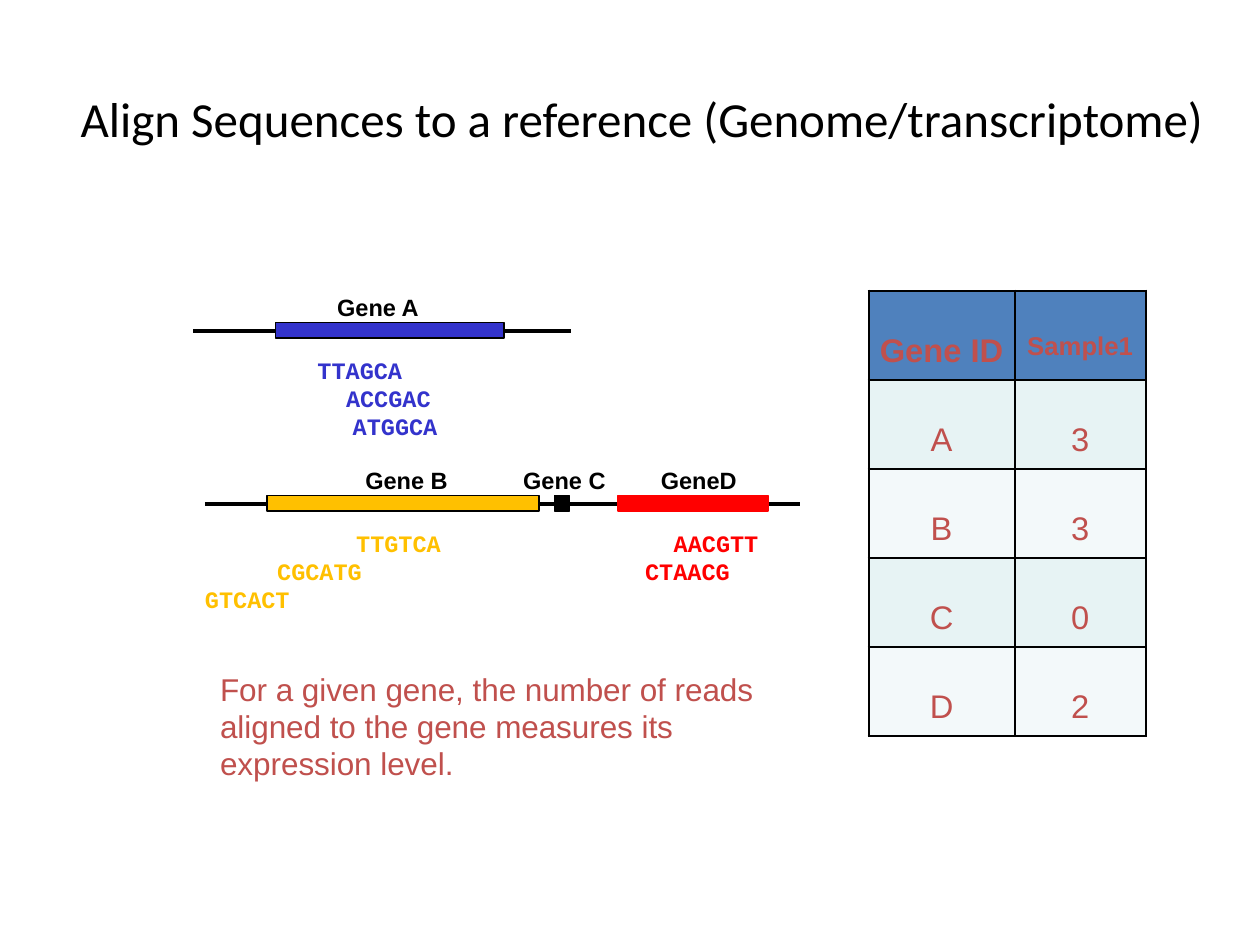
from lxml.etree import SubElement
from pptx import Presentation
from pptx.dml.color import RGBColor
from pptx.enum.shapes import MSO_CONNECTOR, MSO_SHAPE
from pptx.enum.text import MSO_ANCHOR, PP_ALIGN
from pptx.oxml.ns import qn
from pptx.util import Inches, Pt

COLORS = {
    "black": "000000", "blue": "3333CC", "gold": "FFC000", "red": "FF0000",
    "brick": "C0504D", "header": "4F81BD", "band1": "E7F3F4", "band2": "F3F9FA",
}


def rgb(name):
    return RGBColor.from_string(COLORS[name])


def write(tf, lines, size, color="black", font="Arial", bold=False,
          align=PP_ALIGN.LEFT, anchor=MSO_ANCHOR.TOP, wrap=True,
          margins=(0, 0, 0, 0), spacing=None, indents=()):
    """Fill a text frame, one paragraph per line, indents in inches."""
    tf.word_wrap = wrap
    tf.vertical_anchor = anchor
    (tf.margin_left, tf.margin_top,
     tf.margin_right, tf.margin_bottom) = [Inches(m) for m in margins]
    for i, line in enumerate(lines):
        p = tf.paragraphs[0] if i == 0 else tf.add_paragraph()
        p.alignment = align
        if spacing:
            p.line_spacing = Pt(spacing)
        if indents:
            p._p.get_or_add_pPr().set("marL", str(Inches(indents[i])))
        r = p.add_run()
        r.text = line
        r.font.size, r.font.bold, r.font.name = Pt(size), bold, font
        r.font.color.rgb = rgb(color)


def add_text(s, x, y, w, h, lines, size, **fmt):
    sp = s.shapes.add_textbox(Inches(x), Inches(y), Inches(w), Inches(h))
    write(sp.text_frame, lines, size, **fmt)


def add_title(s, x, y, w, h, text):
    sp = s.shapes.title
    sp.left, sp.top, sp.width, sp.height = [Inches(v) for v in (x, y, w, h)]
    write(sp.text_frame, [text], 21, font="Calibri",
          anchor=MSO_ANCHOR.MIDDLE, margins=(0.1, 0.05, 0.1, 0.05))


def add_chromosome(s, x, y, w, genes):
    """Line at height y with genes: name, left, width, fill, outline, label centre, reads."""
    # Backbone
    line = s.shapes.add_connector(MSO_CONNECTOR.STRAIGHT, Inches(x), Inches(y),
                                  Inches(x + w), Inches(y))
    line.line.color.rgb = rgb("black")
    line.line.width = Pt(2)
    SubElement(line._element.spPr, qn("a:effectLst"))

    for name, left, width, fill, outline, center, reads in genes:
        # Gene box and label
        sp = s.shapes.add_shape(MSO_SHAPE.RECTANGLE, Inches(x + left), Inches(y - 0.05),
                                Inches(width), Inches(0.09))
        sp.shadow.inherit = False
        sp.fill.solid()
        sp.fill.fore_color.rgb = rgb(fill)
        sp.line.color.rgb = rgb(outline)
        sp.line.width = Pt(0.75)
        add_text(s, x + center - 0.35, y - 0.28, 0.7, 0.27, [name], 10.1, bold=True,
                 align=PP_ALIGN.CENTER, anchor=MSO_ANCHOR.MIDDLE, wrap=False)
        # Aligned reads, each shifted to its own position
        if reads:
            offsets = [offset for _, offset in reads]
            start = min(offsets)
            add_text(s, x + start, y + 0.15, max(offsets) - start + 0.65, 0.17 * len(reads),
                     [seq for seq, _ in reads], 10.1, color=fill, font="Courier New",
                     bold=True, spacing=12, indents=[o - start for o in offsets])


def add_border(cell):
    tcPr = cell._tc.get_or_add_tcPr()
    for i, side in enumerate(("a:lnL", "a:lnR", "a:lnT", "a:lnB")):
        ln = tcPr.makeelement(qn(side), {"w": str(Pt(1))})
        fill = SubElement(ln, qn("a:solidFill"))
        SubElement(fill, qn("a:srgbClr"), val=COLORS["black"])
        tcPr.insert(i, ln)


def add_counts(s, x, y, col_widths, row_height, rows):
    shape = s.shapes.add_table(len(rows), len(col_widths), Inches(x), Inches(y),
                               Inches(sum(col_widths)), Inches(row_height * len(rows)))
    table = shape.table
    for col, width in zip(table.columns, col_widths):
        col.width = Inches(width)
    for i, values in enumerate(rows):
        table.rows[i].height = Inches(row_height)
        fill = "header" if i == 0 else ("band2", "band1")[i % 2]
        for j, value in enumerate(values):
            cell = table.cell(i, j)
            cell.fill.solid()
            cell.fill.fore_color.rgb = rgb(fill)
            write(cell.text_frame, [value], 11 if (i, j) == (0, 1) else 14,
                  color="brick", bold=i == 0, align=PP_ALIGN.CENTER)
            cell.vertical_anchor = MSO_ANCHOR.TOP
            cell.margin_left = cell.margin_right = Inches(0.06)
            cell.margin_top, cell.margin_bottom = Inches(0.25), Inches(0.03)
            add_border(cell)


def main():
    prs = Presentation()
    # 4:3 page
    prs.slide_width = Inches(7.5)
    prs.slide_height = prs.slide_width * 3 // 4
    s = prs.slides.add_slide(prs.slide_layouts[5])

    add_title(s, 0.38, 0.23, 7.08, 0.94,
              "Align Sequences to a reference (Genome/transcriptome)")

    # Gene maps
    add_chromosome(s, 1.15, 1.97, 2.25, [
        ("Gene A", 0.49, 1.36, "blue", "black", 1.1,
         [("TTAGCA", 0.74), ("ACCGAC", 0.91), ("ATGGCA", 0.95)]),
    ])
    add_chromosome(s, 1.22, 3, 3.54, [
        ("Gene B", 0.37, 1.62, "gold", "black", 1.2,
         [("TTGTCA", 0.9), ("CGCATG", 0.43), ("GTCACT", 0)]),
        ("Gene C", 2.08, 0.09, "black", "black", 2.14, []),
        ("GeneD", 2.46, 0.89, "red", "red", 2.94,
         [("AACGTT", 2.79), ("CTAACG", 2.62)]),
    ])

    # Read counts and explanation
    add_counts(s, 5.17, 1.73, (0.87, 0.78), 0.53, [
        ("Gene ID", "Sample1"), ("A", "3"), ("B", "3"), ("C", "0"), ("D", "2"),
    ])
    add_text(s, 1.22, 3.94, 3.52, 0.78,
             ["For a given gene, the number of reads aligned to the gene "
              "measures its expression level."],
             13.5, color="brick", spacing=16, margins=(0.09, 0.05, 0.09, 0.05))

    prs.save("out.pptx")


if __name__ == "__main__":
    main()
